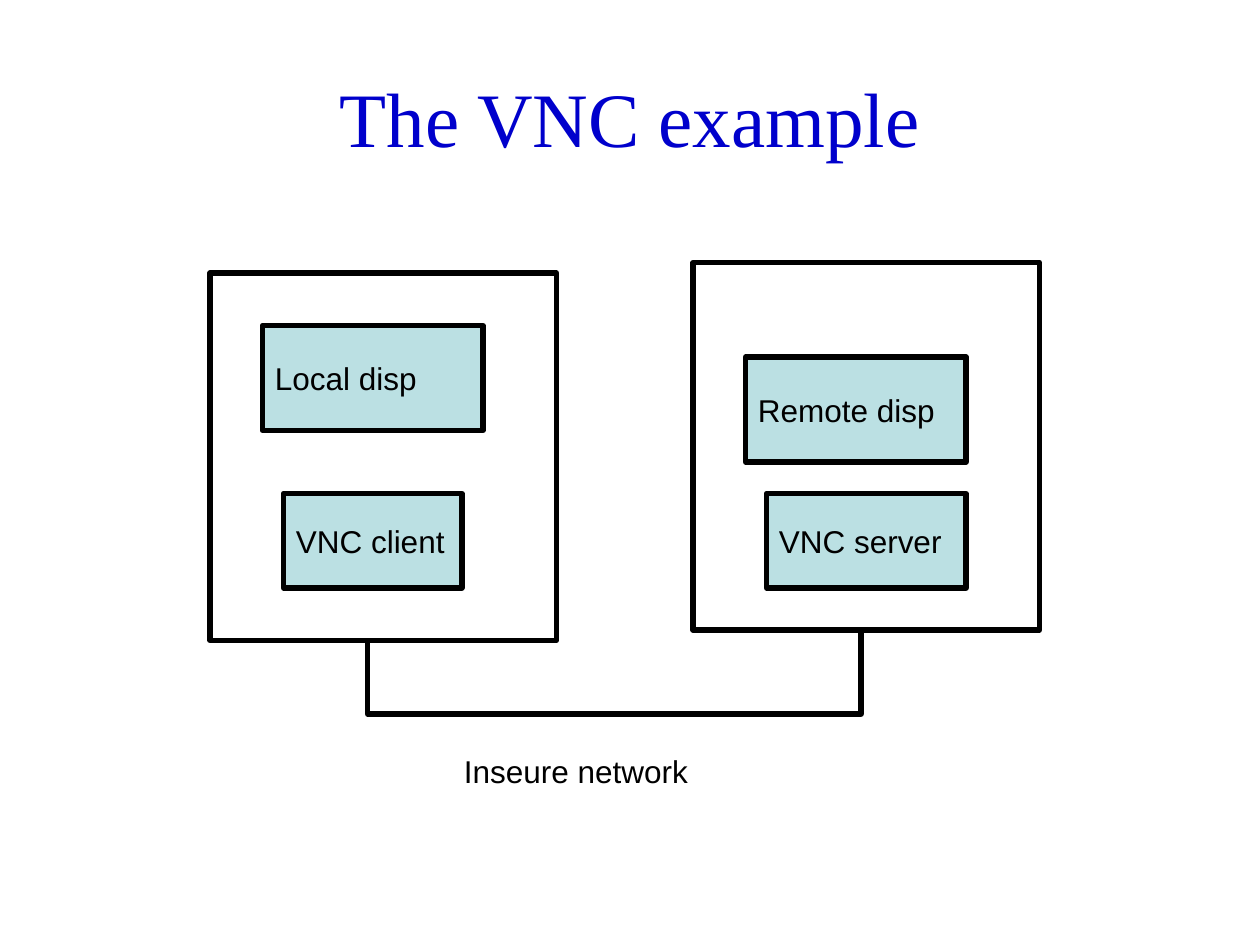
from pptx import Presentation
from pptx.dml.color import RGBColor
from pptx.enum.shapes import MSO_SHAPE
from pptx.enum.text import MSO_ANCHOR, PP_ALIGN
from pptx.util import Inches, Pt

BLACK = RGBColor(0x00, 0x00, 0x00)
BLUE = RGBColor(0x00, 0x00, 0xCC)
TEAL = RGBColor(0xBB, 0xE0, 0xE3)

COLS, ROWS = 120, 90  # grid of twelfths of an inch


class Diagram:
    line_width = Pt(3)

    def __init__(self, prs):
        self.s = prs.slides.add_slide(prs.slide_layouts[6])
        self.cell_w = prs.slide_width // COLS
        self.cell_h = prs.slide_height // ROWS

    def area(self, col, row, cols, rows):
        return (round(col * self.cell_w), round(row * self.cell_h),
                round(cols * self.cell_w), round(rows * self.cell_h))

    def set_text(self, sp, text, font="Arial", size=18, color=BLACK,
                 align=PP_ALIGN.LEFT, anchor=MSO_ANCHOR.MIDDLE, wrap=False):
        tf = sp.text_frame
        tf.word_wrap = wrap
        tf.vertical_anchor = anchor
        p = tf.paragraphs[0]
        p.text = text
        p.alignment = align
        p.font.name, p.font.size = font, Pt(size)
        p.font.color.rgb = color

    def label(self, text, *area, **style):
        self.set_text(self.s.shapes.add_textbox(*self.area(*area)), text, **style)

    def outline(self, sp):
        sp.shadow.inherit = False
        sp.fill.background()
        sp.line.color.rgb = BLACK
        sp.line.width = self.line_width

    def box(self, *area, text=None):
        sp = self.s.shapes.add_shape(MSO_SHAPE.RECTANGLE, *self.area(*area))
        self.outline(sp)
        if text:
            sp.fill.solid()
            sp.fill.fore_color.rgb = TEAL
            self.set_text(sp, text)

    def cable(self, start, *points):
        builder = self.s.shapes.build_freeform(
            *start, scale=(self.cell_w, self.cell_h))
        builder.add_line_segments(points, close=False)
        self.outline(builder.convert_to_shape())


def main():
    prs = Presentation()
    prs.slide_width, prs.slide_height = Inches(10), Inches(7.5)
    d = Diagram(prs)

    # Title
    d.label("The VNC example", 6, 3.6, 108, 15, font="Times New Roman",
            size=44, color=BLUE, align=PP_ALIGN.CENTER, wrap=True)

    # Local machine
    d.box(20, 26, 33, 35)
    d.box(25, 31, 21, 10, text="Local disp")
    d.box(27, 47, 17, 9, text="VNC client")

    # Remote machine
    d.box(66, 25, 33, 35)
    d.box(71, 34, 21, 10, text="Remote disp")
    d.box(73, 47, 19, 9, text="VNC server")

    # Network between the machines
    d.cable((35, 61), (35, 68), (82, 68), (82, 60))
    d.label("Inseure network", 43, 71, 28, 5.2, anchor=MSO_ANCHOR.TOP)

    prs.save("out.pptx")


if __name__ == "__main__":
    main()
